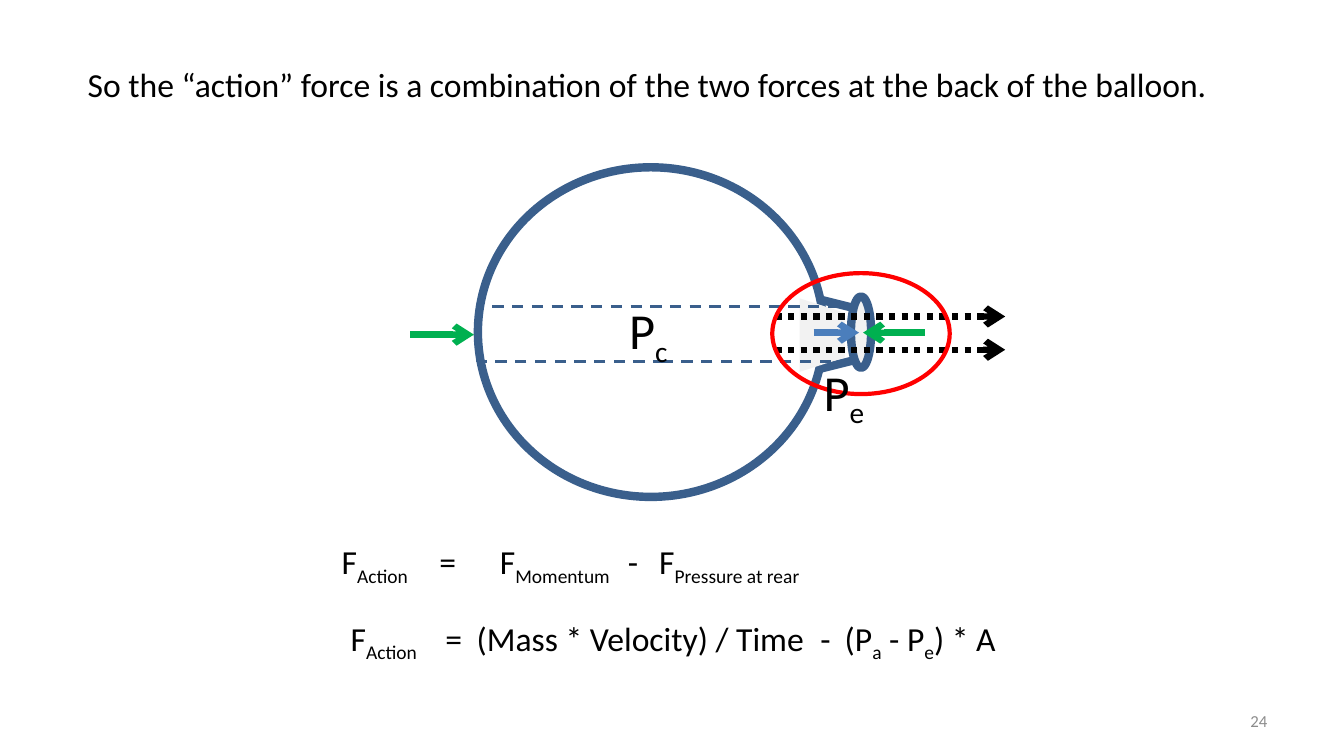
from lxml.etree import SubElement
from pptx import Presentation
from pptx.dml.color import RGBColor
from pptx.enum.dml import MSO_LINE
from pptx.enum.shapes import MSO_CONNECTOR, MSO_SHAPE
from pptx.enum.text import MSO_ANCHOR, MSO_AUTO_SIZE, PP_ALIGN
from pptx.oxml.ns import qn
from pptx.util import Pt

SCALE = 9144
FONT = "Calibri"
COLOURS = {
    "black": "000000",
    "grey": "8C8C8C",
    "white": "FFFFFF",
    "pale": "F2F2F2",
    "navy": "3A5F8C",
    "blue": "4B7EBC",
    "green": "00B050",
    "red": "FF0000",
}


def px(value):
    return value * SCALE


def colour(name):
    return RGBColor.from_string(COLOURS[name])


def place(shape, left, top, width, height):
    shape.left, shape.top = px(left), px(top)
    shape.width, shape.height = px(width), px(height)


def write(box, pieces, size, ink="black", align=PP_ALIGN.LEFT, anchor=MSO_ANCHOR.TOP):
    frame = box.text_frame
    frame.word_wrap = True
    frame.auto_size = MSO_AUTO_SIZE.NONE
    frame.vertical_anchor = anchor
    para = frame.paragraphs[0]
    para.alignment = align
    for index, piece in enumerate(pieces):
        span = para.add_run()
        span.text = piece
        span.font.name = FONT
        span.font.size = Pt(size)
        span.font.color.rgb = colour(ink)
        if index % 2:
            span.font._element.set("baseline", "-25000")
    return para


def add_text(page, bounds, pieces, size, **style):
    box = page.shapes.add_textbox(*map(px, bounds))
    return write(box, pieces, size, **style)


def add_equation(page, bounds, pieces, stops):
    para = add_text(page, bounds, pieces, 24)
    tab_list = SubElement(para._p.get_or_add_pPr(), qn("a:tabLst"))
    for stop in stops:
        SubElement(tab_list, qn("a:tab"), pos=str(px(stop)), algn="l")


def add_outline(shapes, kind, bounds, fill=None, line=None, weight=6):
    shape = shapes.add_shape(kind, *map(px, bounds))
    shape.shadow.inherit = False
    if fill:
        shape.fill.solid()
        shape.fill.fore_color.rgb = colour(fill)
    else:
        shape.fill.background()
    if line:
        shape.line.color.rgb = colour(line)
        shape.line.width = Pt(weight)
    else:
        shape.line.fill.background()
    return shape


def add_arrow(shapes, start, end, y, ink, dash=None):
    arrow = shapes.add_connector(
        MSO_CONNECTOR.STRAIGHT, px(start), px(y), px(end), px(y))
    arrow.line.color.rgb = colour(ink)
    arrow.line.width = Pt(4.5)
    if dash:
        arrow.line.dash_style = dash
    SubElement(arrow.line._get_or_add_ln(), qn("a:tailEnd"), type="arrow")
    SubElement(arrow._element.spPr, qn("a:effectLst"))


def add_balloon(page):
    parts = page.shapes.add_group_shape().shapes
    neck = add_outline(parts, MSO_SHAPE.TRAPEZOID, (793, 309, 72, 45), "white", "navy")
    add_outline(parts, MSO_SHAPE.OVAL, (474, 166, 343, 327), "white", "navy")
    add_outline(parts, MSO_SHAPE.OVAL, (844, 294, 20, 71), "pale", "navy")
    throat = add_outline(parts, MSO_SHAPE.TRAPEZOID, (779, 310, 73, 45), "pale")
    throat.adjustments[0] = 0.32
    for piece in (neck, throat):
        piece.rotation = 90
    channel = add_outline(
        page.shapes, MSO_SHAPE.RECTANGLE, (474, 304, 370, 55), line="navy", weight=2)
    channel.line.dash_style = MSO_LINE.DASH


def main():
    deck = Presentation()
    deck.slide_width, deck.slide_height = px(1333), px(750)
    page = deck.slides.add_slide(deck.slide_layouts[5])

    title = page.shapes.title
    place(title, 77, 58, 1145, 50)
    write(title, ["So the “action” force is a combination of the two forces "
                  "at the back of the balloon."], 24)
    add_text(page, (956, 695, 311, 40), ["24"], 12, ink="grey",
             align=PP_ALIGN.RIGHT, anchor=MSO_ANCHOR.MIDDLE)

    add_balloon(page)
    add_arrow(page.shapes, 407, 470, 332, "green")
    add_arrow(page.shapes, 917, 856, 330, "green")
    add_text(page, (614, 292, 91, 71), ["P", "c"], 36)
    add_arrow(page.shapes, 807, 852, 330, "blue")
    exhaust = page.shapes.add_group_shape().shapes
    for y in (314, 347):
        add_arrow(exhaust, 769, 997, y, "black", MSO_LINE.ROUND_DOT)
    add_outline(page.shapes, MSO_SHAPE.OVAL, (766, 271, 176, 120), line="red", weight=3)
    add_text(page, (807, 353, 73, 71), ["P", "e"], 36)

    add_equation(
        page, (329, 532, 650, 50),
        ["F", "Action", "\t=\tF", "Momentum", "\t-\tF", "Pressure at rear"],
        (97, 157, 284, 315))
    add_equation(
        page, (338, 608, 723, 50),
        ["F", "Action", "\t=\t(Mass * Velocity) / Time\t-\t(P", "a", " - P", "e", ") * A"],
        (94, 125, 466, 490))

    deck.save("out.pptx")


if __name__ == "__main__":
    main()
